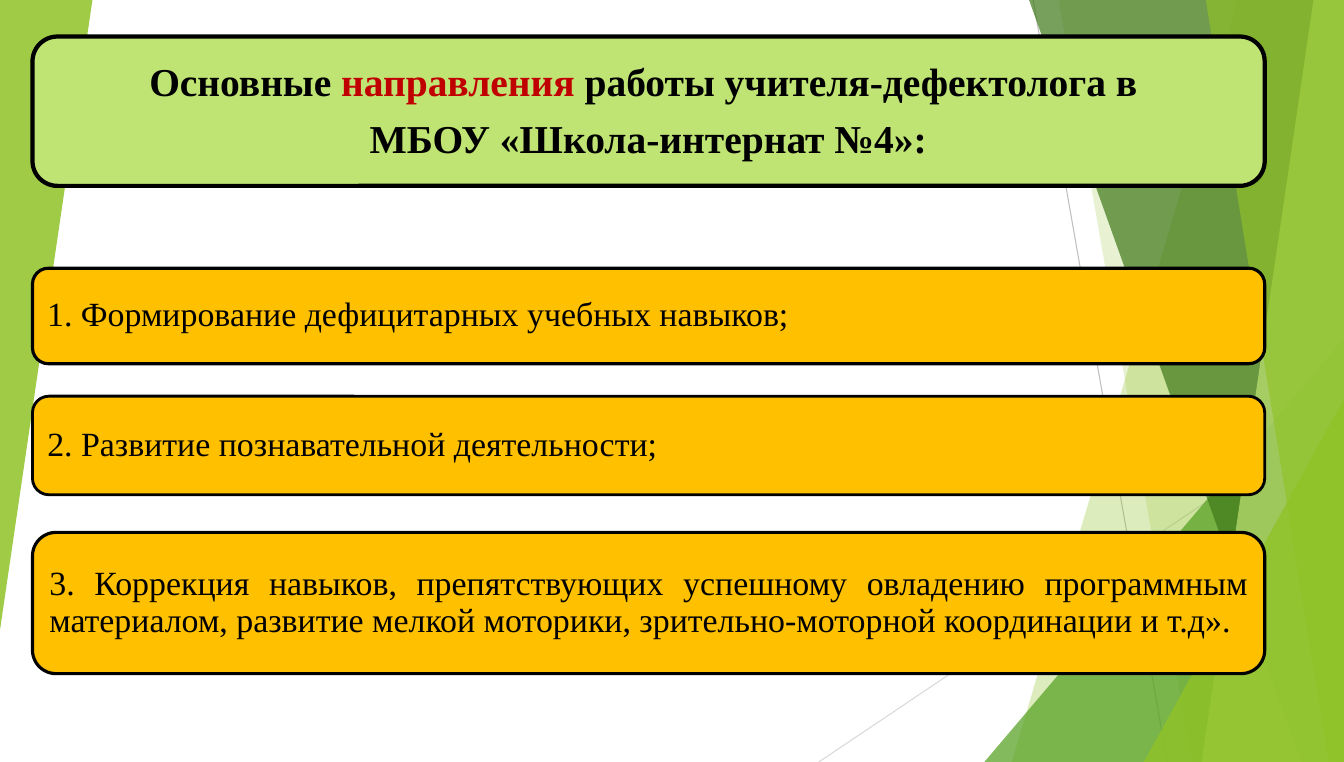
from lxml import etree
from pptx import Presentation, util as u
from pptx.dml.color import RGBColor
from pptx.enum import shapes, text
from pptx.oxml.ns import qn

WIDTH, HEIGHT = 13.23, 7.5


def paint(target, color, alpha=100):
    target.fill.solid()
    target.fill.fore_color.rgb = RGBColor.from_string(color)
    if alpha < 100:
        srgb = target.fill._xPr.find(".//" + qn("a:srgbClr"))
        etree.SubElement(srgb, qn("a:alpha"), val=str(alpha * 1000))


def style(paragraph, size, align):
    paragraph.font.name = "Times New Roman"
    paragraph.font.size = u.Pt(size)
    paint(paragraph.font, "000000")
    paragraph.alignment = align
    paragraph.line_spacing = 0.9
    paragraph.space_after = u.Pt(size * 0.35)


deck = Presentation()
deck.slide_width, deck.slide_height = u.Inches(WIDTH), u.Inches(HEIGHT)
slide = deck.slides.add_slide(deck.slide_layouts[5])
canvas = slide.shapes
heading = canvas.title

for x1, y1, x2, y2, color in [
    (10.17, 0, 11.49, HEIGHT, "BFBFBF"),
    (WIDTH, 4.03, 8.06, HEIGHT, "D9D9D9"),
]:
    ray = canvas.add_connector(
        shapes.MSO_CONNECTOR.STRAIGHT, *map(u.Inches, (x1, y1, x2, y2))
    )
    paint(ray.line, color)
    ray.line.width = u.Pt(0.75)
    etree.SubElement(ray._element.spPr, qn("a:effectLst"))

facets = [
    ("band", (12.18, 9.96), "90C226", 30),
    ("band", (10.42, 11.73), "90C226", 20),
    ("corner", (9.69, 3.33, 3.54, 4.17, 0), "54A021", 72),
    ("band", (10.13, 12.81), "3F7819", 70),
    ("band", (12.93, 11.83), "C0E474", 70),
    ("band", (11.87, 13.08), "90C226", 65),
    ("corner", (11.26, 3.93, 1.97, 3.57, 0), "90C226", 80),
    ("corner", (0, 0, 0.91, 6.2, 180), "90C226", 85),
]
for kind, place, color, alpha in facets:
    if kind == "band":
        top, bottom = place
        outline = canvas.build_freeform(u.Inches(top), 0)
        outline.add_line_segments(
            [
                (u.Inches(x), u.Inches(y))
                for x, y in [(WIDTH, 0), (WIDTH, HEIGHT), (bottom, HEIGHT)]
            ]
        )
        facet = outline.convert_to_shape()
    else:
        *box, turn = place
        facet = canvas.add_shape(
            shapes.MSO_SHAPE.ISOSCELES_TRIANGLE, *map(u.Inches, box)
        )
        facet.adjustments[0] = 1
        facet.rotation = turn
    paint(facet, color, alpha)
    facet.line.fill.background()
    facet.shadow.inherit = False

LEFT, JUSTIFY = text.PP_ALIGN.LEFT, text.PP_ALIGN.JUSTIFY
cards = [
    (0.36, 1.47, "C0E474", 3, "", LEFT),
    (2.64, 0.94, "FFC000", 2.25, "1. Формирование дефицитарных учебных навыков;", JUSTIFY),
    (3.9, 0.97, "FFC000", 2, "2. Развитие познавательной деятельности;", LEFT),
    (5.24, 1.39, "FFC000", 2.25,
     "3. Коррекция навыков, препятствующих успешному овладению программным "
     "материалом, развитие мелкой моторики, зрительно-моторной координации и т.д».",
     JUSTIFY),
]
for top, height, color, border, direction, align in cards:
    card = canvas.add_shape(
        shapes.MSO_SHAPE.ROUNDED_RECTANGLE,
        *map(u.Inches, (0.32, top, 12.13, height)),
    )
    paint(card, color)
    paint(card.line, "000000")
    card.line.width = u.Pt(border)
    card.shadow.inherit = False
    if direction:
        frame = card.text_frame
        frame.word_wrap = True
        frame.vertical_anchor = text.MSO_ANCHOR.MIDDLE
        frame.margin_left = frame.margin_right = u.Inches(0.1)
        frame.margin_top = frame.margin_bottom = u.Inches(0.1)
        frame.text = direction
        style(frame.paragraphs[0], 24, align)

canvas._spTree.append(heading._element)
heading.left, heading.top = u.Inches(0.39), u.Inches(0.44)
heading.width, heading.height = u.Inches(11.98), u.Inches(1.33)
frame = heading.text_frame
frame.auto_size = text.MSO_AUTO_SIZE.NONE
frame.vertical_anchor = text.MSO_ANCHOR.MIDDLE
frame.margin_left = frame.margin_right = u.Inches(0.12)
frame.margin_top = frame.margin_bottom = u.Inches(0.12)
frame.text = "Основные \nМБОУ «Школа-интернат №4»:"
opening = frame.paragraphs[0]
accent = opening.add_run()
accent.text = "направления"
paint(accent.font, "C00000")
opening.add_run().text = " работы учителя-дефектолога в "
for line in frame.paragraphs:
    style(line, 28, text.PP_ALIGN.CENTER)
    line.font.bold = True

deck.save("out.pptx")
